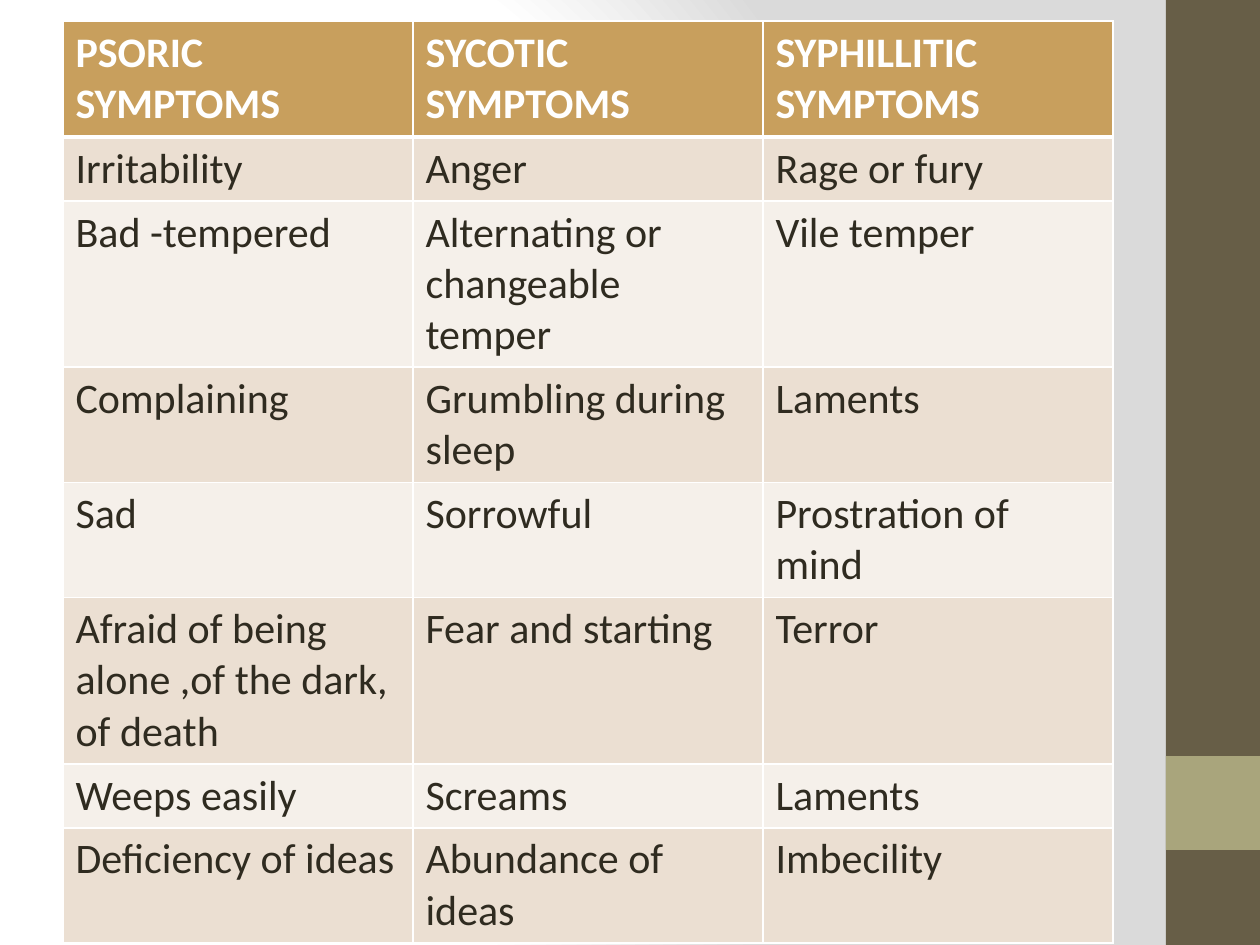
from pptx import Presentation
from pptx.dml.color import RGBColor
from pptx.enum.shapes import MSO_SHAPE
from pptx.oxml import parse_xml
from pptx.oxml.ns import nsdecls
from pptx.util import Pt

RECTANGLE = MSO_SHAPE.RECTANGLE
EMU_PER_PX = 914400 // 126
SLIDE_SIZE = (1260, 945)
FONT_NAME = "Calibri"
FONT_SIZE = 24
WHITE = "FFFFFF"
TEXT_COLOR = "2F2B20"
HEADER_FILL = "C89F5D"
BAND_FILLS = ("F5F0EA", "EBDFD2")
BACKGROUND_STOPS = ((0, WHITE), (75, WHITE), (100, "DADADA"))
SIDEBAR_BLOCKS = (((1166, 0, 94, 945), "675E47"), ((1166, 756, 94, 94), "A9A57C"))

TABLE_BOX = (63, 21, 1050, 882)
ROW_HEIGHTS = (116, 63, 158, 108, 108, 158, 63, 108)
SYMPTOMS = (
    ("PSORIC SYMPTOMS", "SYCOTIC SYMPTOMS", "SYPHILLITIC SYMPTOMS"),
    ("Irritability", "Anger", "Rage or fury"),
    ("Bad -tempered", "Alternating or changeable temper", "Vile temper"),
    ("Complaining", "Grumbling during sleep", "Laments"),
    ("Sad", "Sorrowful", "Prostration of mind"),
    ("Afraid of being alone ,of the dark, of death", "Fear and starting", "Terror"),
    ("Weeps easily", "Screams", "Laments"),
    ("Deficiency of ideas", "Abundance of ideas", "Imbecility"),
)


def px(length):
    """Turn a length in pixels into EMU."""
    return length * EMU_PER_PX


def color(hex_string):
    """Turn a hex string into a colour."""
    return RGBColor.from_string(hex_string)


def set_background(slide):
    """Give the slide a radial gradient centred near the left."""
    slide.background.fill.solid()
    properties = slide.element.xpath(".//p:bgPr")[0]
    stops = "".join(
        f'<a:gs pos="{position * 1000}"><a:srgbClr val="{value}"/></a:gs>'
        for position, value in BACKGROUND_STOPS
    )
    gradient = parse_xml(
        f'<a:gradFill {nsdecls("a")} rotWithShape="1"><a:gsLst>{stops}</a:gsLst>'
        '<a:path path="circle">'
        '<a:fillToRect l="20000" t="50000" r="100000" b="50000"/>'
        "</a:path></a:gradFill>"
    )
    properties.replace(properties[0], gradient)


def add_block(slide, box, fill):
    """Add a plain filled rectangle."""
    shape = slide.shapes.add_shape(RECTANGLE, *map(px, box))
    shape.shadow.inherit = False
    shape.fill.solid()
    shape.fill.fore_color.rgb = color(fill)
    shape.line.fill.background()


def set_borders(cell, top, bottom):
    """Draw white cell borders with the given top and bottom widths in points."""
    properties = cell._tc.get_or_add_tcPr()
    for side, width in (("L", 1), ("R", 1), ("T", top), ("B", bottom)):
        properties.append(parse_xml(
            f'<a:ln{side} {nsdecls("a")} w="{Pt(width)}"><a:solidFill>'
            f'<a:srgbClr val="{WHITE}"/></a:solidFill></a:ln{side}>'
        ))


def fill_cell(cell, text, row_index):
    """Write and style one cell according to its row."""
    is_header = row_index == 0
    set_borders(cell, 3 if row_index == 1 else 1, 3 if is_header else 1)
    cell.fill.solid()
    cell.fill.fore_color.rgb = color(HEADER_FILL if is_header else BAND_FILLS[row_index % 2])
    cell.text_frame.text = text
    font = cell.text_frame.paragraphs[0].runs[0].font
    font.name = FONT_NAME
    font.size = Pt(FONT_SIZE)
    font.bold = is_header
    font.color.rgb = color(WHITE if is_header else TEXT_COLOR)


def add_symptom_table(slide):
    """Add the table comparing the three groups of symptoms."""
    frame = slide.shapes.add_table(len(SYMPTOMS), len(SYMPTOMS[0]), *map(px, TABLE_BOX))
    table = frame.table
    for row_index, (height, texts) in enumerate(zip(ROW_HEIGHTS, SYMPTOMS)):
        table.rows[row_index].height = px(height)
        for column_index, text in enumerate(texts):
            fill_cell(table.cell(row_index, column_index), text, row_index)


def main():
    """Build and save the slide."""
    presentation = Presentation()
    presentation.slide_width, presentation.slide_height = map(px, SLIDE_SIZE)
    slide = presentation.slides.add_slide(presentation.slide_layouts[6])
    set_background(slide)
    for box, fill in SIDEBAR_BLOCKS:
        add_block(slide, box, fill)
    add_symptom_table(slide)
    presentation.save("out.pptx")


if __name__ == "__main__":
    main()
